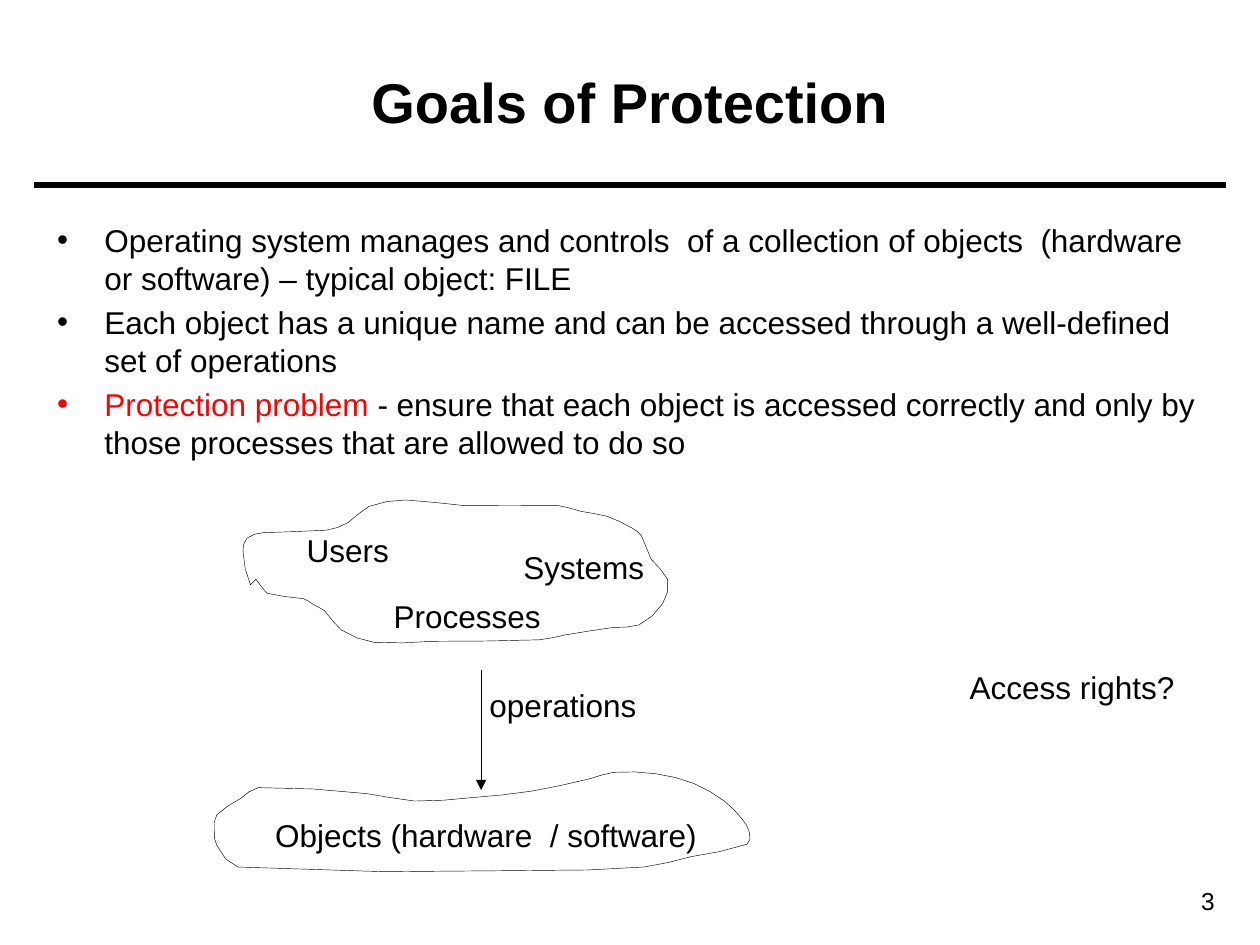
from math import hypot

from lxml import etree
from pptx import Presentation
from pptx.dml.color import RGBColor
from pptx.enum.shapes import MSO_CONNECTOR
from pptx.enum.text import MSO_ANCHOR, MSO_AUTO_SIZE, PP_ALIGN
from pptx.oxml.ns import qn
from pptx.util import Cm, Pt

BLACK = RGBColor(0, 0, 0)
RED = RGBColor(255, 0, 0)


def add_text(p, text, size=18, bold=False, color=BLACK, align=None):
    r = p.add_run()
    r.text = text
    r.font.name = "Arial"
    r.font.size = Pt(size)
    r.font.bold = bold
    r.font.color.rgb = color
    if align is not None:
        p.alignment = align


def smooth(points):
    """Add the middle point of a smooth curve between each two outline points."""
    n = len(points)
    dirs = []
    for i in range(n):
        (x0, y0), (x1, y1) = points[i - 1], points[(i + 1) % n]
        d = hypot(x1 - x0, y1 - y0)
        dirs.append(((x1 - x0) / d, (y1 - y0) / d))
    curve = []
    for i in range(n):
        j = (i + 1) % n
        a, b = points[i], points[j]
        d = hypot(b[0] - a[0], b[1] - a[1])
        mid = tuple((a[c] + b[c]) / 2 + d / 8 * (dirs[i][c] - dirs[j][c]) for c in (0, 1))
        curve += [a, mid]
    return curve


prs = Presentation()
prs.slide_width, prs.slide_height = Cm(25.4), Cm(19.05)
s = prs.slides.add_slide(prs.slide_layouts[1])

# Title
title = s.shapes.title
title.left, title.top, title.width, title.height = Cm(0.9), Cm(0.44), Cm(23.6), Cm(3.18)
tf = title.text_frame
tf.vertical_anchor = MSO_ANCHOR.MIDDLE
add_text(tf.paragraphs[0], "Goals of Protection", size=32, bold=True, align=PP_ALIGN.CENTER)

# Bulleted list
body = s.placeholders[1]
body.left, body.top, body.width, body.height = Cm(0.9), Cm(4.33), Cm(23.6), Cm(7.01)
tf = body.text_frame
bullets = [
    [("Operating system manages and controls  of a collection of objects  "
      "(hardware or software) – typical object: FILE", BLACK)],
    [("Each object has a unique name and can be accessed through a well-defined "
      "set of operations", BLACK)],
    [("Protection problem ", RED),
     ("- ensure that each object is accessed correctly and only by those processes "
      "that are allowed to do so", BLACK)],
]
for i, parts in enumerate(bullets):
    p = tf.paragraphs[0] if i == 0 else tf.add_paragraph()
    p.space_before = Pt(3.6)
    pPr = p._p.get_or_add_pPr()
    pPr.set("marL", str(Cm(0.95)))
    pPr.set("indent", str(-Cm(0.95)))
    etree.SubElement(pPr, qn("a:buChar")).set("char", "•")
    for text, color in parts:
        add_text(p, text, color=color)

# Rule under the title and arrow from users to objects
for x1, y1, x2, y2, width, arrow in [
    (0.69, 3.73, 24.71, 3.73, 3, False),
    (9.7, 13.51, 9.7, 15.93, 0.25, True),
]:
    line = s.shapes.add_connector(MSO_CONNECTOR.STRAIGHT, Cm(x1), Cm(y1), Cm(x2), Cm(y2))
    line.line.color.rgb = BLACK
    line.line.width = Pt(width)
    if arrow:
        etree.SubElement(line.line._get_or_add_ln(), qn("a:tailEnd")).set("type", "triangle")
    etree.SubElement(line._element.spPr, qn("a:effectLst"))

# Hand-drawn clouds, outline points in centimetres
users_cloud = [
    (5.05, 11.79), (4.9, 11.13), (4.98, 10.85), (5.31, 10.74), (6.58, 10.69),
    (7.01, 10.54), (7.44, 10.21), (8.18, 10.08), (9.32, 10.19), (11.23, 10.19),
    (11.71, 10.31), (12.24, 10.41), (12.73, 10.64), (12.93, 10.8), (13.13, 11.28),
    (13.46, 11.68), (13.36, 12.17), (12.88, 12.6), (12.37, 12.65), (11.4, 12.8),
    (10.87, 12.9), (8.71, 12.93), (7.54, 12.95), (6.88, 12.7), (6.55, 12.32),
    (6.32, 12.19), (6.12, 12.07), (5.38, 11.96), (5.16, 11.68),
]
objects_cloud = [
    (4.32, 16.74), (4.37, 16.43), (4.85, 16.1), (5.21, 15.88), (7.39, 16),
    (8.36, 16.15), (9.53, 16.08), (10.72, 15.95), (11.89, 15.7), (12.37, 15.57),
    (13.23, 15.6), (14, 15.8), (14.6, 16.15), (14.96, 16.51), (15.11, 16.79),
    (15.06, 17.02), (13.94, 17.27), (12.98, 17.48), (10.69, 17.55), (4.8, 17.48),
    (4.37, 17.04),
]
for points in (users_cloud, objects_cloud):
    curve = [(Cm(x), Cm(y)) for x, y in smooth(points)]
    fb = s.shapes.build_freeform(*curve[0])
    fb.add_line_segments(curve[1:], close=True)
    cloud = fb.convert_to_shape()
    cloud.shadow.inherit = False
    cloud.fill.background()
    cloud.line.color.rgb = BLACK
    cloud.line.width = Pt(0.25)

# Labels and slide number
for text, x, y, w, size, align in [
    ("Users ", 5.92, 10.58, 2.36, 18, PP_ALIGN.CENTER),
    ("Systems", 10.28, 10.92, 2.98, 18, PP_ALIGN.CENTER),
    ("Processes", 7.67, 11.91, 3.5, 18, PP_ALIGN.CENTER),
    ("operations", 9.6, 13.71, 3.5, 18, PP_ALIGN.CENTER),
    ("Access rights? ", 19.27, 13.34, 4.86, 18, PP_ALIGN.CENTER),
    ("Objects (hardware  / software)", 5.28, 16.33, 9.04, 18, PP_ALIGN.CENTER),
    ("3", 22.1, 17.73, 2.64, 14, PP_ALIGN.RIGHT),
]:
    tf = s.shapes.add_textbox(Cm(x), Cm(y), Cm(w), Cm(1.02 if size == 18 else 0.86)).text_frame
    tf.word_wrap = align == PP_ALIGN.RIGHT
    tf.auto_size = MSO_AUTO_SIZE.SHAPE_TO_FIT_TEXT
    add_text(tf.paragraphs[0], text, size=size, align=align)

prs.save("out.pptx")
